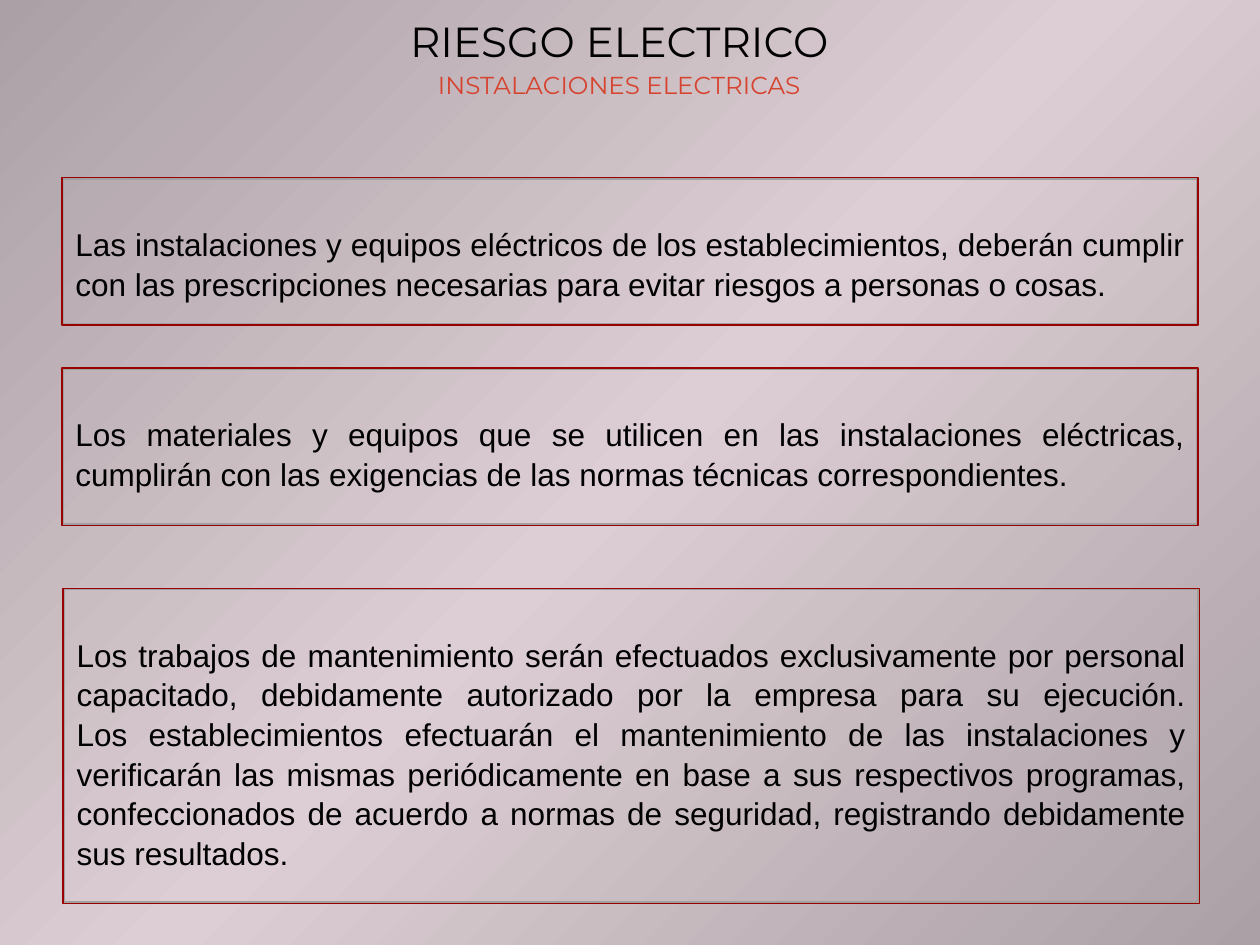
from copy import deepcopy
from dataclasses import dataclass

from pptx import Presentation
from pptx.dml.color import RGBColor
from pptx.enum.shapes import MSO_SHAPE as Shape
from pptx.enum.text import MSO_AUTO_SIZE as AutoSize, PP_ALIGN as Align
from pptx.oxml.ns import qn
from pptx.util import Inches, Pt

BLACK, RED, DARK_RED, GREY = "000000", "D64430", "990000", "A0A0A0"
EDGE, CENTRE = "ABA0A5", "DCCED4"
PANEL_WIDTH = 9
FRAME_GAP = 0.01


@dataclass
class Panel:
    left: float
    top: float
    height: float
    lines: tuple[str, ...]


PANELS = [
    Panel(0.5, 1.42, 1.15, (
        "Las instalaciones y equipos eléctricos de los establecimientos, deberán "
        "cumplir con las prescripciones necesarias para evitar riesgos a personas "
        "o cosas.",
    )),
    Panel(0.5, 2.93, 1.23, (
        "Los materiales y equipos que se utilicen en las instalaciones eléctricas, "
        "cumplirán con las exigencias de las normas técnicas correspondientes.",
    )),
    Panel(0.51, 4.68, 2.48, (
        "Los trabajos de mantenimiento serán efectuados exclusivamente por personal "
        "capacitado, debidamente autorizado por la empresa para su ejecución.",
        "Los establecimientos efectuarán el mantenimiento de las instalaciones y "
        "verificarán las mismas periódicamente en base a sus respectivos programas, "
        "confeccionados de acuerdo a normas de seguridad, registrando debidamente "
        "sus resultados.",
    )),
]


def rgb(color: str) -> RGBColor:
    return RGBColor.from_string(color)


def add_run(paragraph, text: str, font: str, size: float, color: str) -> None:
    run = paragraph.add_run()
    run.text = text
    run.font.name = font
    run.font.size = Pt(size)
    run.font.color.rgb = rgb(color)


def paint_background(slide) -> None:
    """Diagonal gradient, lightest halfway."""
    fill = slide.background.fill
    fill.gradient()
    fill.gradient_angle = 315
    first = slide.element.find(".//" + qn("a:gs"))
    first.addnext(deepcopy(first))
    for stop, color, position in zip(
        fill.gradient_stops, (EDGE, CENTRE, EDGE), (0, 0.5, 1)
    ):
        stop.color.rgb = rgb(color)
        stop.position = position


def add_heading(slide) -> None:
    heading = slide.shapes.add_textbox(
        Inches(2), Inches(0.17), Inches(5.83), Inches(0.69)
    ).text_frame
    heading.word_wrap = True
    heading.auto_size = AutoSize.SHAPE_TO_FIT_TEXT
    title, subtitle = heading.paragraphs[0], heading.add_paragraph()
    for paragraph in (title, subtitle):
        paragraph.alignment = Align.CENTER
        paragraph.line_spacing = 0.75
    subtitle.space_before = Pt(6.5)
    add_run(title, "RIESGO ELECTRICO", "Montserrat", 24, BLACK)
    add_run(subtitle, "INSTALACIONES ELECTRICAS", "Montserrat", 14, RED)


def add_frame(shapes, panel: Panel, gap: float, color: str, weight: float) -> None:
    """Unfilled rectangle lying the given gap outside the panel."""
    frame = shapes.add_shape(
        Shape.RECTANGLE,
        Inches(panel.left - gap), Inches(panel.top - gap),
        Inches(PANEL_WIDTH + 2 * gap), Inches(panel.height + 2 * gap),
    )
    frame.shadow.inherit = False
    frame.fill.background()
    frame.line.color.rgb = rgb(color)
    frame.line.width = Pt(weight)


def add_panel(slide, panel: Panel) -> None:
    shapes = slide.shapes.add_group_shape().shapes
    body = shapes.add_textbox(
        Inches(panel.left), Inches(panel.top),
        Inches(PANEL_WIDTH), Inches(panel.height),
    ).text_frame
    body.word_wrap = True
    body.margin_top = Inches(0.35)
    paragraph = body.paragraphs[0]
    paragraph.alignment = Align.JUSTIFY
    paragraph.line_spacing = 1.05
    for index, line in enumerate(panel.lines):
        if index:
            paragraph.add_line_break()
        add_run(paragraph, line, "Arial", 18, BLACK)
    add_frame(shapes, panel, 0, GREY, 0)
    add_frame(shapes, panel, FRAME_GAP, DARK_RED, 0.87)


def main() -> None:
    deck = Presentation()
    deck.slide_width, deck.slide_height = Inches(10), Inches(7.5)
    slide = deck.slides.add_slide(deck.slide_layouts[6])
    paint_background(slide)
    add_heading(slide)
    for panel in PANELS:
        add_panel(slide, panel)
    deck.save("out.pptx")


if __name__ == "__main__":
    main()
